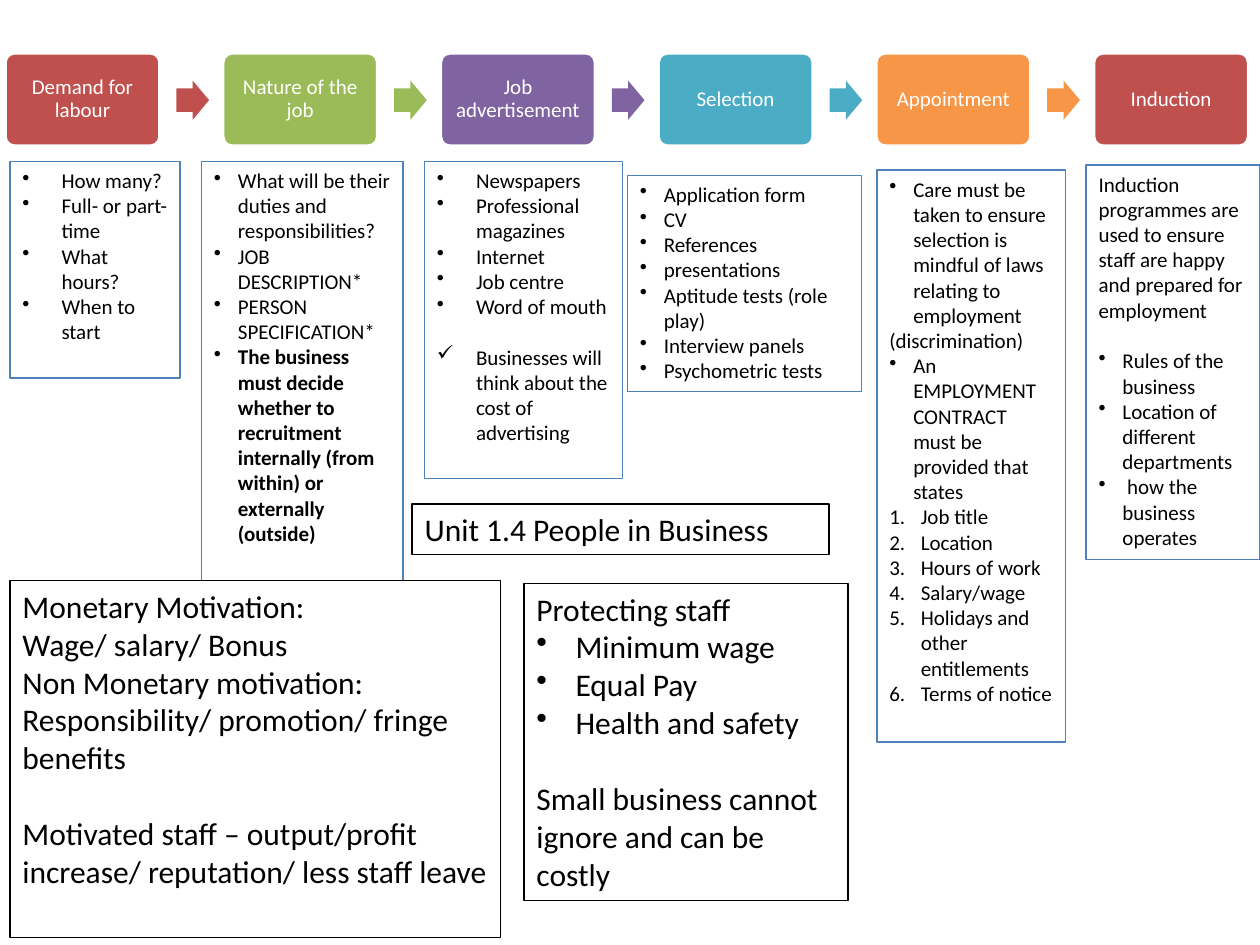
from dataclasses import dataclass
from lxml.etree import SubElement
from pptx import Presentation
from pptx.dml.color import RGBColor
from pptx.enum.shapes import MSO_SHAPE
from pptx.enum.text import MSO_ANCHOR, MSO_AUTO_SIZE, PP_ALIGN
from pptx.oxml.ns import qn
from pptx.util import Inches, Pt


@dataclass(frozen=True)
class Theme:
    """Hold the colours, font and type sizes."""
    font: str = "Calibri"
    small: int = 12
    large: int = 18
    ink: str = "000000"
    paper: str = "FFFFFF"
    edge: str = "4F81BD"
    steps: tuple = ("C0504D", "9BBB59", "8064A2", "4BACC6", "F79646")


@dataclass(frozen=True)
class Group:
    """Hold paragraphs that share a mark, indent, weight and gap above."""
    lines: tuple
    mark: str = ""
    indent: float = 0
    bold: bool = False
    gap: float = 0


THEME = Theme()
COLS, ROWS = 100, 75
WIDTH, HEIGHT = Inches(10), Inches(7.5)
STEPS = ("Demand for labour", "Nature of the job", "Job advertisement",
         "Selection", "Appointment", "Induction")
PITCH = 17.28


def plain(*lines, gap=0):
    """Make unmarked paragraphs."""
    return Group(lines, gap=gap)


def wide(*lines, mark="•", gap=0):
    """Make a list with a deep indent."""
    return Group(lines, mark, 0.31, gap=gap)


def tight(*lines, bold=False, gap=0):
    """Make a list with a shallow indent."""
    return Group(lines, "•", 0.19, bold, gap)


NOTES = (
    ((0.8, 12.8, 13.5, 17.2), (
        wide("How many?", "Full- or part-time", "What hours?", "When to start"),)),
    ((16, 12.8, 16, 33.3), (
        tight("What will be their duties and responsibilities?",
              "JOB DESCRIPTION*", "PERSON SPECIFICATION*"),
        tight("The business must decide whether to recruitment internally "
              "(from within) or externally (outside)", bold=True))),
    ((33.7, 12.8, 15.7, 25.2), (
        wide("Newspapers", "Professional magazines", "Internet", "Job centre",
             "Word of mouth"),
        wide("Businesses will think about the cost of advertising",
             mark="✓", gap=14.6))),
    ((49.8, 13.9, 18.6, 17.2), (
        tight("Application form", "CV", "References", "presentations",
              "Aptitude tests (role play)", "Interview panels",
              "Psychometric tests"),)),
    ((69.6, 13.5, 15, 45.4), (
        tight("Care must be taken to ensure selection is mindful of laws "
              "relating to employment"),
        plain("(discrimination)"),
        tight("An EMPLOYMENT CONTRACT must be provided that states"),
        Group(("Job title", "Location", "Hours of work", "Salary/wage",
               "Holidays and other entitlements", "Terms of notice"),
              "1.", 0.25))),
    ((86.2, 13.1, 13.8, 31.3), (
        plain("Induction programmes are used to ensure staff are happy and "
              "prepared for employment"),
        tight("Rules of the business", gap=14.6),
        tight("Location of different departments",
              " how the business operates"))),
)
TITLE = ((32.7, 40, 33.1, 4), (plain("Unit 1.4 People in Business"),))
PANELS = (
    ((0.8, 46.1, 38.9, 28.3), (
        plain("Monetary Motivation:", "Wage/ salary/ Bonus",
              "Non Monetary motivation:",
              "Responsibility/ promotion/ fringe benefits"),
        plain("Motivated staff – output/profit increase/ reputation/ less "
              "staff leave", gap=22))),
    ((41.6, 46.3, 25.7, 25.2), (
        plain("Protecting staff"),
        wide("Minimum wage", "Equal Pay", "Health and safety"),
        plain("Small business cannot ignore and can be costly", gap=22))),
)


def place(x, y, w, h):
    """Turn grid columns and rows into lengths."""
    return (int(WIDTH * x / COLS), int(HEIGHT * y / ROWS),
            int(WIDTH * w / COLS), int(HEIGHT * h / ROWS))


def style(para, size, color, bold=False):
    """Set the font of a paragraph."""
    font = para.font
    font.name, font.size, font.bold = THEME.font, Pt(size), bold
    font.color.rgb = RGBColor.from_string(color)


def bullet(para, mark, indent):
    """Give a paragraph a bullet or number with a hanging indent."""
    props = para._p.get_or_add_pPr()
    props.set("marL", str(Inches(indent)))
    props.set("indent", str(-Inches(indent)))
    if not mark:
        SubElement(props, qn("a:buNone"))
    elif mark == "1.":
        SubElement(props, qn("a:buAutoNum"), type="arabicPeriod")
    else:
        SubElement(props, qn("a:buChar"), char=mark)


def write(frame, groups, size):
    """Fill a text frame with groups of paragraphs."""
    frame.word_wrap = True
    frame.auto_size = MSO_AUTO_SIZE.NONE
    frame.vertical_anchor = MSO_ANCHOR.TOP
    pairs = [(group, i, line) for group in groups
             for i, line in enumerate(group.lines)]
    for n, (group, i, line) in enumerate(pairs):
        para = frame.add_paragraph() if n else frame.paragraphs[0]
        para.text = line
        bullet(para, group.mark, group.indent)
        para.alignment = PP_ALIGN.LEFT
        para.space_before = Pt(0 if i else group.gap)
        style(para, size, THEME.ink, group.bold)


def border(shape, color, width):
    """Outline a shape."""
    shape.line.color.rgb = RGBColor.from_string(color)
    shape.line.width = Pt(width)


def box(slide, area, groups, size, edge):
    """Add an outlined text box."""
    shape = slide.shapes.add_textbox(*place(*area))
    border(shape, edge, 0.75)
    write(shape.text_frame, groups, size)


def head(slide):
    """Move and format the title."""
    area, groups = TITLE
    shape = slide.shapes.title
    shape.left, shape.top, shape.width, shape.height = place(*area)
    border(shape, THEME.ink, 0.75)
    write(shape.text_frame, groups, THEME.large)


def block(slide, kind, area, color, ratios):
    """Add a filled preset shape."""
    shape = slide.shapes.add_shape(kind, *place(*area))
    shape.shadow.inherit = False
    shape.fill.solid()
    shape.fill.fore_color.rgb = RGBColor.from_string(color)
    shape.line.fill.background()
    for i, ratio in enumerate(ratios):
        shape.adjustments[i] = ratio
    return shape


def step(slide, col, text, color):
    """Add one labelled step of the process."""
    shape = block(slide, MSO_SHAPE.ROUNDED_RECTANGLE,
                  (col, 4.2, 12.3, 7.4), color, (0.1,))
    border(shape, THEME.paper, 2)
    frame = shape.text_frame
    frame.word_wrap = True
    frame.vertical_anchor = MSO_ANCHOR.MIDDLE
    frame.margin_left = frame.margin_right = Inches(0.07)
    frame.margin_top = frame.margin_bottom = Inches(0.07)
    para = frame.paragraphs[0]
    para.text = text
    para.alignment = PP_ALIGN.CENTER
    para.line_spacing = 0.9
    style(para, THEME.small, THEME.paper)


def flow(slide):
    """Lay out the steps with arrows between them."""
    for i, text in enumerate(STEPS):
        col = 0.4 + i * PITCH
        color = THEME.steps[i % len(THEME.steps)]
        step(slide, col, text, color)
        if i < len(STEPS) - 1:
            block(slide, MSO_SHAPE.RIGHT_ARROW,
                  (col + 13.6, 6.4, 2.6, 3.1), color, (0.6, 0.5))


def main():
    """Build and save the slide."""
    deck = Presentation()
    deck.slide_width, deck.slide_height = WIDTH, HEIGHT
    slide = deck.slides.add_slide(deck.slide_layouts[5])
    flow(slide)
    for area, groups in NOTES:
        box(slide, area, groups, THEME.small, THEME.edge)
    head(slide)
    for area, groups in PANELS:
        box(slide, area, groups, THEME.large, THEME.ink)
    deck.save("out.pptx")


if __name__ == "__main__":
    main()
